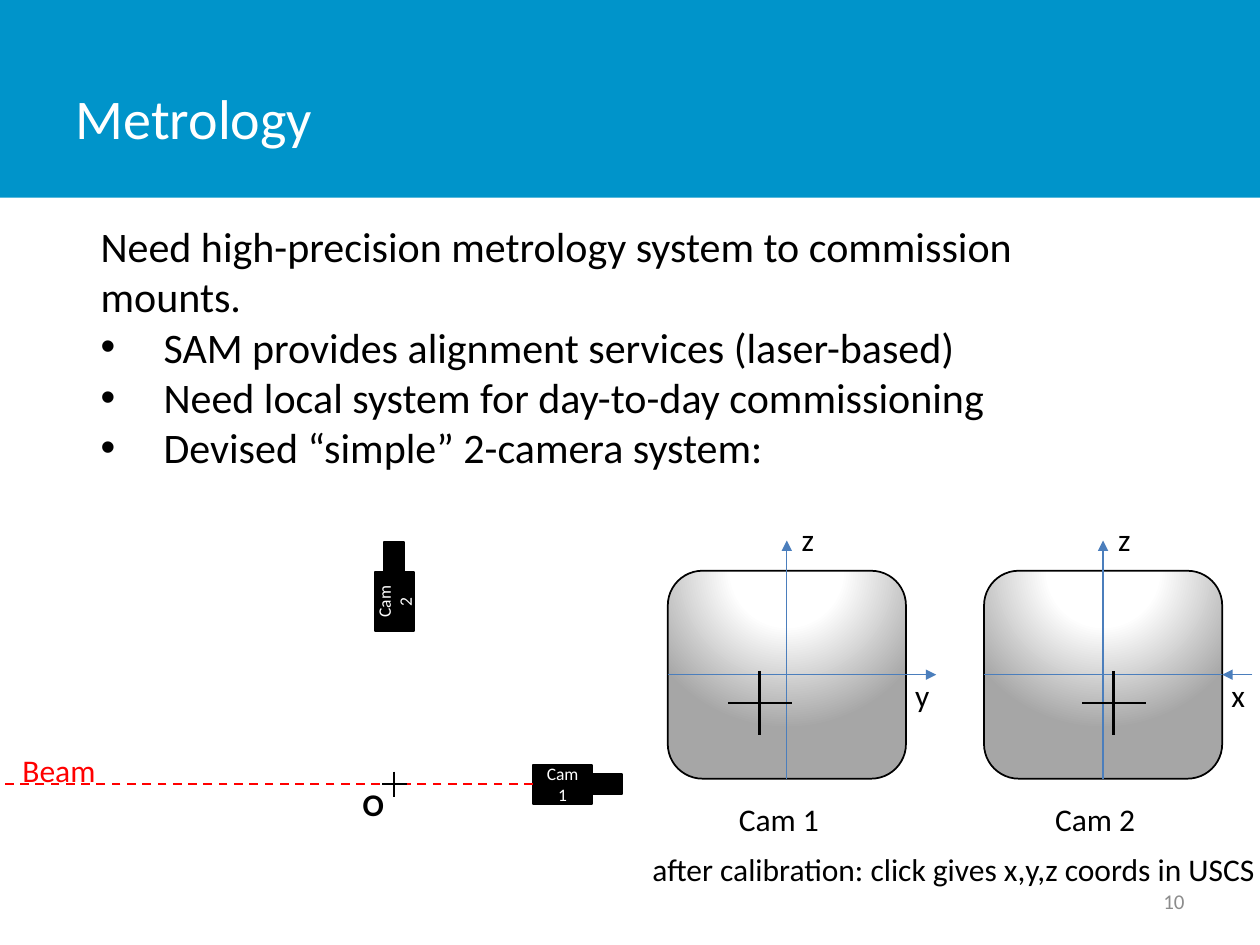
from math import cos, radians, sin

from lxml import etree
from pptx import Presentation
from pptx import util as u
from pptx.dml.color import RGBColor
from pptx.enum import dml, shapes, text
from pptx.oxml import parse_xml
from pptx.oxml.ns import nsdecls, qn

# Slide grid: 100 columns by 75 rows; every box is (column, row, columns, rows)
WIDTH, HEIGHT = u.Inches(10), u.Inches(7.5)
COL, ROW = WIDTH / 100, HEIGHT / 75

FONT = "Calibri"
BLACK = RGBColor(0x00, 0x00, 0x00)
WHITE = RGBColor(0xFF, 0xFF, 0xFF)
BAND = RGBColor(0x00, 0x94, 0xCA)
GREY = RGBColor(0x8C, 0x8C, 0x8C)
RED = RGBColor(0xFF, 0x00, 0x00)
AXIS = RGBColor(0x4B, 0x7E, 0xBC)

SCREEN_FILL = f"""<a:gradFill {nsdecls('a')} rotWithShape="1"><a:gsLst>
<a:gs pos="0"><a:srgbClr val="FFFFFF"/></a:gs>
<a:gs pos="35000"><a:srgbClr val="FFFFFF"/></a:gs>
<a:gs pos="100000"><a:srgbClr val="A6A6A6"/></a:gs></a:gsLst>
<a:path path="circle"><a:fillToRect l="50000" t="-80000" r="50000" b="180000"/></a:path>
</a:gradFill>"""


def place(box):
    col, row, cols, rows = box
    return round(col * COL), round(row * ROW), round(cols * COL), round(rows * ROW)


def write(frame, *lines, size=18, color=BLACK, bold=False, wrap=False,
          align=text.PP_ALIGN.LEFT, anchor=text.MSO_ANCHOR.TOP):
    """Write lines into a text frame; a line starting with a bullet becomes a list item."""
    frame.word_wrap = wrap
    frame.auto_size = text.MSO_AUTO_SIZE.NONE
    frame.vertical_anchor = anchor
    for number, line in enumerate(lines):
        paragraph = frame.add_paragraph() if number else frame.paragraphs[0]
        paragraph.text = line.removeprefix("•")
        if line.startswith("•"):
            props = paragraph._p.get_or_add_pPr()
            props.set("marL", str(u.Inches(0.5)))
            props.set("indent", str(-u.Inches(0.5)))
            etree.SubElement(props, qn("a:buFont")).set("typeface", "Arial")
            etree.SubElement(props, qn("a:buChar")).set("char", "•")
        paragraph.alignment = align
        font = paragraph.font
        font.name, font.size, font.bold = FONT, u.Pt(size), bold
        font.color.rgb = color


def label(slide, box, *lines, **style):
    write(slide.shapes.add_textbox(*place(box)).text_frame, *lines, **style)


def block(slide, kind, box, fill=None, outline=None):
    shape = slide.shapes.add_shape(kind, *place(box))
    shape.shadow.inherit = False
    if fill is not None:
        shape.fill.solid()
        shape.fill.fore_color.rgb = fill
    if outline is None:
        shape.line.fill.background()
    else:
        shape.line.color.rgb = outline
        shape.line.width = u.Pt(1)
    return shape


def line(slide, start, end, color, width, dash=None, arrow=False):
    ends = [round(n * unit) for point in (start, end) for n, unit in zip(point, (COL, ROW))]
    connector = slide.shapes.add_connector(shapes.MSO_CONNECTOR.STRAIGHT, *ends)
    connector.line.color.rgb = color
    connector.line.width = u.Pt(width)
    if dash is not None:
        connector.line.dash_style = dash
    if arrow:
        etree.SubElement(connector.line._get_or_add_ln(), qn("a:tailEnd")).set("type", "triangle")
    etree.SubElement(connector._element.spPr, qn("a:effectLst"))
    return connector


def cross(slide, x, y, size, width):
    half = size / 2
    line(slide, (x, y - half), (x, y + half), BLACK, width)
    line(slide, (x + half, y), (x - half, y), BLACK, width)


def header(slide, box):
    band = block(slide, shapes.MSO_SHAPE.RECTANGLE, box, BAND)
    slide.shapes._spTree.insert(2, band._element)  # behind the title
    col, row, cols, rows = box
    title = slide.shapes.title
    title.left, title.top, title.width, title.height = place(
        (col + 5, row + 3, cols * 0.78, rows * 0.8))
    write(title.text_frame, "Metrology", size=32, color=WHITE, wrap=True,
          anchor=text.MSO_ANCHOR.MIDDLE)


def camera(slide, center, name, rotation=0):
    """Camera body with its lens on the side that the rotation points to."""
    x, y = center
    body = block(slide, shapes.MSO_SHAPE.RECTANGLE, (x - 2.35, y - 1.55, 4.7, 3.1), BLACK, BLACK)
    write(body.text_frame, name, size=10, color=WHITE, wrap=True,
          align=text.PP_ALIGN.CENTER, anchor=text.MSO_ANCHOR.MIDDLE)
    x += 3.55 * cos(radians(rotation))
    y += 3.55 * sin(radians(rotation))
    lens = block(slide, shapes.MSO_SHAPE.RECTANGLE, (x - 1.2, y - 0.8, 2.4, 1.6), BLACK, BLACK)
    body.rotation = lens.rotation = rotation
    return body


def beam_setup(slide, box):
    """Two cameras looking at the origin O, one of them along the beam."""
    left, top, width, height = box
    origin_x, beam_y = left + 31.3, top + height
    cam_x = left + width - 4.75
    cam_1 = camera(slide, (cam_x, beam_y), "Cam 1")
    camera(slide, (origin_x, top + 4.4), "Cam 2", rotation=270)
    beam = line(slide, (cam_x - 2.35, beam_y), (left, beam_y), RED, 1.25,
                dash=dml.MSO_LINE.DASH)
    beam.begin_connect(cam_1, 1)
    cross(slide, origin_x, beam_y, 2, 1.25)
    label(slide, (origin_x - 3.5, beam_y - 0.4, 3.7, 4), "O", bold=True)
    label(slide, (left + 0.8, beam_y - 3.1, 7.9, 4), "Beam", color=RED)


def camera_view(slide, box, name, side_axis, target_x, inward=False):
    """Camera screen with its axes, the target cross and the name below."""
    left, top, width, height = box
    middle, center = left + width / 2, top + height / 2
    right, bottom = left + width, top + height
    screen = block(slide, shapes.MSO_SHAPE.ROUNDED_RECTANGLE, box, outline=BLACK)
    props = screen._element.spPr
    props.insert(props.index(props.find(qn("a:prstGeom"))) + 1, parse_xml(SCREEN_FILL))

    # Axes across the screen
    for start, end, sites in (((middle, top), (middle, bottom), (0, 2)),
                              ((left, center), (right, center), (1, 3))):
        axis = line(slide, start, end, AXIS, 0.75)
        axis.begin_connect(screen, sites[0])
        axis.end_connect(screen, sites[1])
    cross(slide, left + target_x, top + 10.5, 5.1, 1.5)
    label(slide, (middle - 4.8, bottom + 1.2, 8.5, 4), name)

    # Arrows outside the screen
    line(slide, (middle, top), (middle, top - 2.4), AXIS, 0.75,
         arrow=True).begin_connect(screen, 0)
    label(slide, (middle + 0.2, top - 4.5, 3, 4), "z")
    edge, outside = (right, center), (right + 2.4, center)
    if inward:
        line(slide, outside, edge, AXIS, 0.75, arrow=True).end_connect(screen, 3)
    else:
        line(slide, edge, outside, AXIS, 0.75, arrow=True).begin_connect(screen, 3)
    label(slide, (right - 0.25, center - 0.4, 3.2, 4), side_axis)


def main():
    deck = Presentation()
    deck.slide_width, deck.slide_height = WIDTH, HEIGHT
    slide = deck.slides.add_slide(deck.slide_layouts[5])

    header(slide, (0, 0, 100, 15.7))
    label(slide, (71.7, 69.5, 23.3, 4), "10", size=12, color=GREY, wrap=True,
          align=text.PP_ALIGN.RIGHT, anchor=text.MSO_ANCHOR.MIDDLE)
    label(slide, (7, 17, 83.1, 25.6),
          "Need high-precision metrology system to commission mounts.",
          "•SAM provides alignment services (laser-based)",
          "•Need local system for day-to-day commissioning",
          "•Devised “simple” 2-camera system:", size=24, wrap=True)
    beam_setup(slide, (0, 43.35, 49.4, 18.9))
    camera_view(slide, (53, 45.3, 18.9, 16.5), "Cam 1", "y", 7.3)
    camera_view(slide, (78.1, 45.3, 18.9, 16.5), "Cam 2", "x", 10.3, inward=True)
    label(slide, (50.8, 67, 50.5, 4), "after calibration: click gives x,y,z coords in USCS")
    deck.save("out.pptx")


if __name__ == "__main__":
    main()
